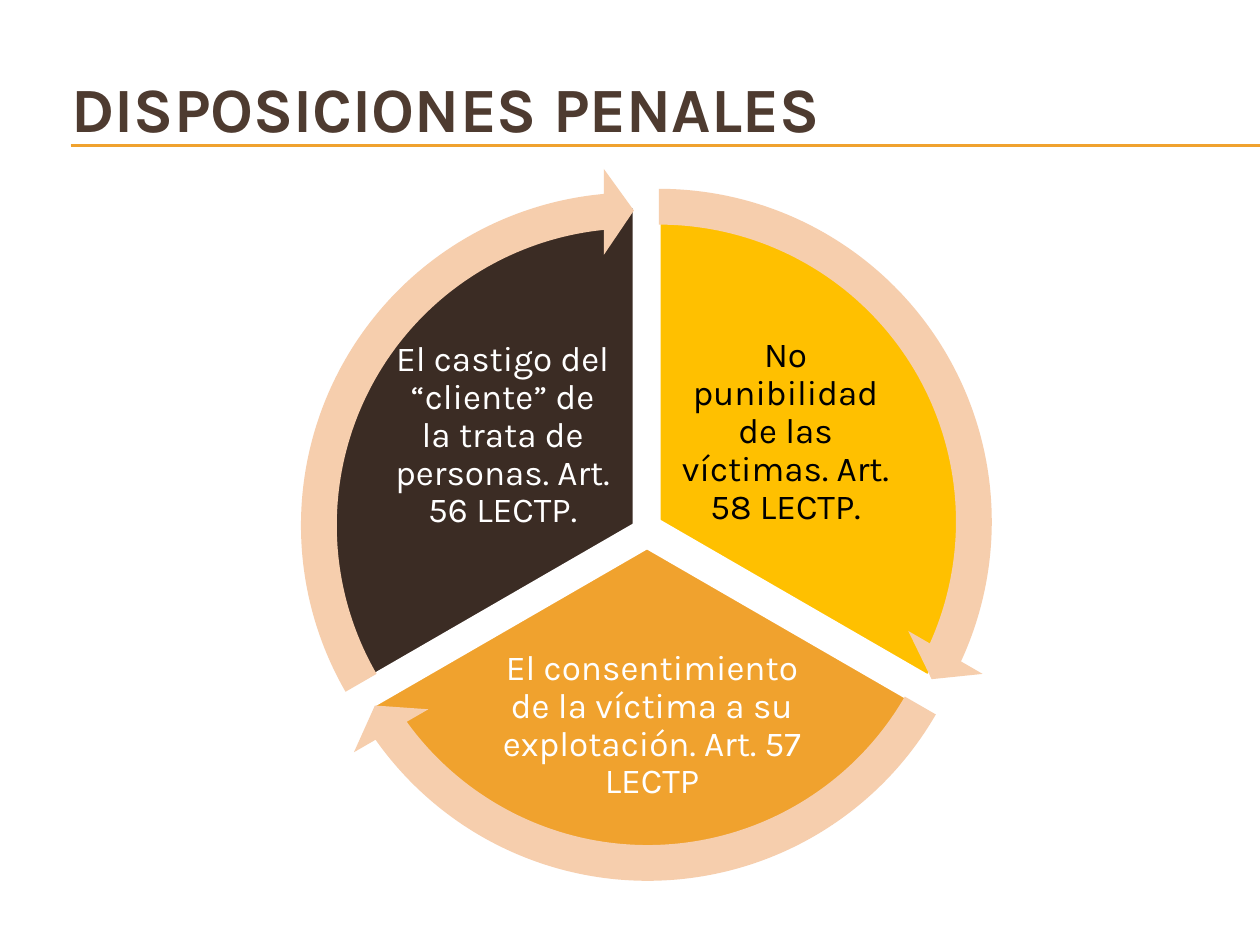
from lxml import etree
from pptx import Presentation
from pptx.dml.color import RGBColor
from pptx.enum.shapes import MSO_CONNECTOR, MSO_SHAPE
from pptx.enum.text import MSO_ANCHOR, PP_ALIGN
from pptx.oxml.ns import qn
from pptx.util import Inches, Pt

STRAIGHT = MSO_CONNECTOR.STRAIGHT
PIE = MSO_SHAPE.PIE
CIRCULAR_ARROW = MSO_SHAPE.CIRCULAR_ARROW
MIDDLE = MSO_ANCHOR.MIDDLE
CENTER = PP_ALIGN.CENTER

FONT = "Karla"
BROWN = RGBColor(0x4E, 0x3B, 0x30)
DARK = RGBColor(0x3B, 0x2C, 0x24)
ORANGE = RGBColor(0xF0, 0xA2, 0x2E)
YELLOW = RGBColor(0xFF, 0xC0, 0x00)
PEACH = RGBColor(0xF6, 0xCE, 0xAD)
WHITE = RGBColor(0xFF, 0xFF, 0xFF)
BLACK = RGBColor(0x00, 0x00, 0x00)

ARROW_SIZE = 5.68
SECTORS = [
    ((2.78, 1.61, 4.9, 5.05), (162, 18), YELLOW),
    ((2.61, 1.82, 5.05, 5.05), (18, 90), ORANGE),
    ((2.51, 1.64, 5.05, 5.05), (90, 162), DARK),
]
LABELS = [
    ((5.36, 2.68, 1.75, 1.5), "No punibilidad de las víctimas. Art. 58 LECTP.", BLACK),
    ((3.82, 5.1, 2.71, 1.32),
     "El consentimiento de la víctima a su explotación. Art. 57 LECTP", WHITE),
    ((3.09, 2.71, 1.8, 1.5),
     "El castigo del “cliente” de la trata de personas. Art. 56 LECTP.", WHITE),
]
ARROWS = [
    ((2.39, 1.3), 14.73, 161.99),
    ((2.3, 1.51), 86.72, 18),
    ((2.19, 1.33), 158.73, 90),
]


def add_rule(s, y):
    """Draw a thin orange line from the margin to the right edge."""
    line = s.shapes.add_connector(STRAIGHT, Inches(0.56), Inches(y), Inches(10), Inches(y))
    line.line.color.rgb = ORANGE
    line.line.width = Pt(0.75)
    etree.SubElement(line._element.spPr, qn("a:effectLst"))


def add_text(s, box, text, size, color):
    """Add a wrapped, vertically centred text box and return its frame."""
    tf = s.shapes.add_textbox(*map(Inches, box)).text_frame
    tf.word_wrap = True
    tf.vertical_anchor = MIDDLE
    p = tf.paragraphs[0]
    p.text = text
    p.font.name = FONT
    p.font.size = Pt(size)
    p.font.color.rgb = color
    return tf


def add_title(s, text):
    """Add the bold slide title."""
    tf = add_text(s, (0.47, 0.23, 9, 1.25), text, 36, BROWN)
    tf.paragraphs[0].font.bold = True


def add_label(s, box, text, color):
    """Add the centred text of a sector."""
    tf = add_text(s, box, text, 20, color)
    tf.margin_left = tf.margin_right = tf.margin_top = tf.margin_bottom = Inches(0.03)
    p = tf.paragraphs[0]
    p.alignment = CENTER
    p.line_spacing = 0.9
    p.space_after = Pt(7)


def add_round(s, kind, box, adjustments, color):
    """Add a filled preset shape with the given adjustments."""
    sp = s.shapes.add_shape(kind, *map(Inches, box))
    sp.shadow.inherit = False
    for i, value in enumerate(adjustments):
        sp.adjustments[i] = value
    sp.fill.solid()
    sp.fill.fore_color.rgb = color
    return sp


def add_sector(s, box, angles, color):
    """Add a pie sector outlined in white."""
    sp = add_round(s, PIE, box, angles, color)
    sp.line.color.rgb = WHITE
    sp.line.width = Pt(2)


def add_arrow(s, corner, end, start):
    """Add a circular arrow without outline."""
    box = (*corner, ARROW_SIZE, ARROW_SIZE)
    sp = add_round(s, CIRCULAR_ARROW, box, (0.05, 3.28, end, start, 0.06), PEACH)
    sp.line.fill.background()


def main():
    """Build the slide and save it."""
    prs = Presentation()
    prs.slide_width, prs.slide_height = Inches(10), Inches(7.5)
    s = prs.slides.add_slide(prs.slide_layouts[6])
    for y in (1.15, 1.16):
        add_rule(s, y)
    add_title(s, "DISPOSICIONES PENALES")
    for sector, label in zip(SECTORS, LABELS):
        add_sector(s, *sector)
        add_label(s, *label)
    for arrow in ARROWS:
        add_arrow(s, *arrow)
    prs.save("out.pptx")


if __name__ == "__main__":
    main()
